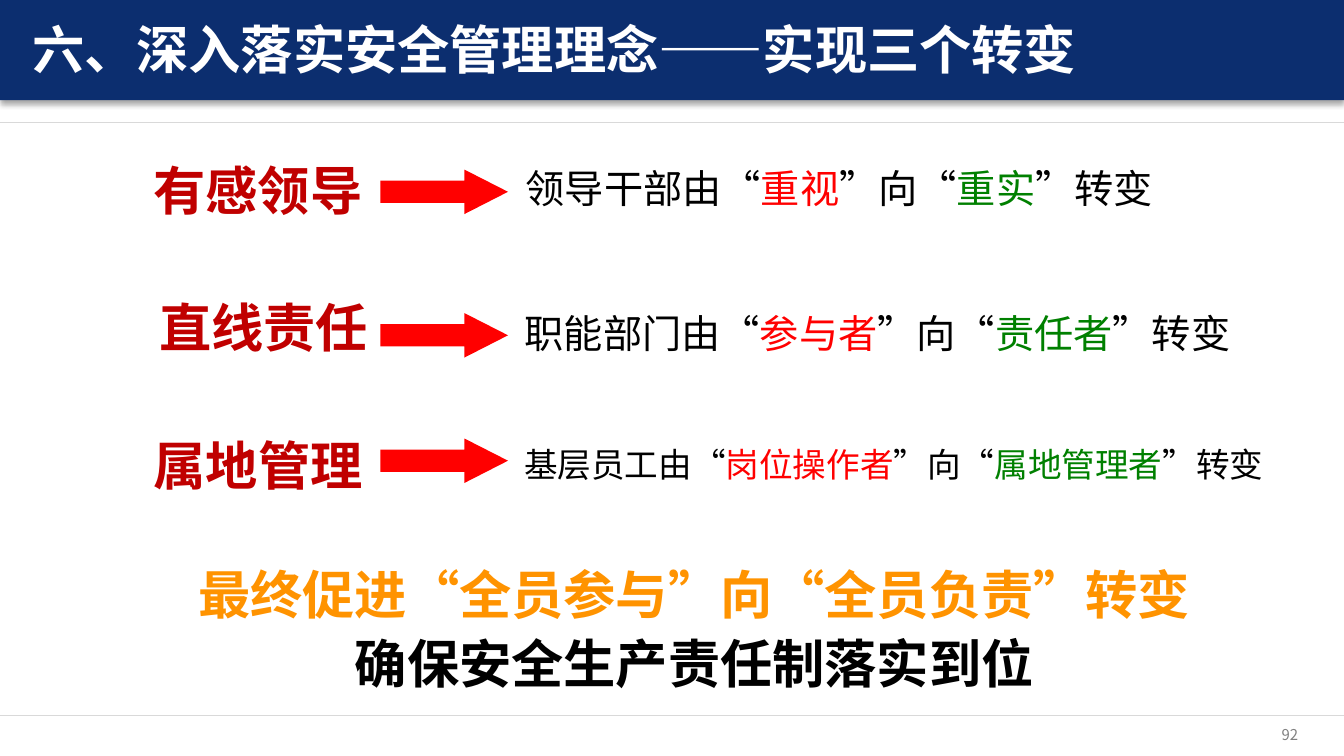
from lxml import etree
from pptx import Presentation
from pptx.dml.color import RGBColor
from pptx.enum.shapes import MSO_CONNECTOR, MSO_SHAPE
from pptx.enum.text import MSO_ANCHOR, PP_ALIGN
from pptx.oxml.ns import qn
from pptx.util import Inches, Pt

RECT, ARROW = MSO_SHAPE.RECTANGLE, MSO_SHAPE.RIGHT_ARROW
STRAIGHT = MSO_CONNECTOR.STRAIGHT
LEFT, CENTER, RIGHT = PP_ALIGN.LEFT, PP_ALIGN.CENTER, PP_ALIGN.RIGHT
TOP, MIDDLE = MSO_ANCHOR.TOP, MSO_ANCHOR.MIDDLE
FONT = "Noto Sans CJK SC"
C = {
    "white": "FFFFFF", "navy": "0C2E6F", "rule": "D9D9D9", "gray": "808080",
    "label": "C00000", "red": "FF0000", "green": "008000",
    "orange": "FF9300", "black": "000000",
}

prs = Presentation()
prs.slide_width = Inches(10)
prs.slide_height = prs.slide_width * 9 // 16
COL, ROW = prs.slide_width / 100, prs.slide_height / 100
s = prs.slides.add_slide(prs.slide_layouts[6])


def add_block(kind, x, y, w, h, color):
    sp = s.shapes.add_shape(kind, int(x * COL), int(y * ROW), int(w * COL), int(h * ROW))
    sp.shadow.inherit = False
    sp.fill.solid()
    sp.fill.fore_color.rgb = RGBColor.from_string(C[color])
    sp.line.fill.background()
    return sp


def add_text(x, y, w, h, paragraphs, size, bold=False, align=CENTER,
             anchor=TOP, inset=(0.09, 0.04), spacing=1.0):
    sp = s.shapes.add_textbox(int(x * COL), int(y * ROW), int(w * COL), int(h * ROW))
    tf = sp.text_frame
    tf.word_wrap = True
    tf.vertical_anchor = anchor
    tf.margin_left = tf.margin_right = Inches(inset[0])
    tf.margin_top = tf.margin_bottom = Inches(inset[1])
    for i, runs in enumerate(paragraphs):
        p = tf.add_paragraph() if i else tf.paragraphs[0]
        p.alignment = align
        p.line_spacing = spacing
        for text, color in runs:
            r = p.add_run()
            r.text = text
            r.font.size = Pt(size)
            r.font.bold = bold
            r.font.name = FONT
            r.font.color.rgb = RGBColor.from_string(C[color])
            rPr = r.font._element
            rPr.set("lang", "zh-CN")
            ea = etree.Element(qn("a:ea"), typeface=FONT)
            rPr.find(qn("a:latin")).addnext(ea)


add_block(RECT, 0, 94.6, 100, 5.4, "white")
for y in (16.12, 94.6):
    rule = s.shapes.add_connector(STRAIGHT, 0, int(y * ROW), prs.slide_width, int(y * ROW))
    rule.line.color.rgb = RGBColor.from_string(C["rule"])
    rule.line.width = Pt(0.25)
    etree.SubElement(rule._element.spPr, qn("a:effectLst"))

banner = add_block(RECT, 0, -0.95, 100, 14.22, "navy")
effects = banner._element.spPr.find(qn("a:effectLst"))
shadow = etree.SubElement(effects, qn("a:outerShdw"), blurRad=str(Pt(3)),
                          dist=str(Pt(1.8)), dir="5400000", rotWithShape="0")
shade = etree.SubElement(shadow, qn("a:srgbClr"), val=C["black"])
etree.SubElement(shade, qn("a:alpha"), val="35000")

add_text(2.4, 2.31, 85.4, 8.36, [[("六、深入落实安全管理理念——实现三个转变", "white")]],
         28, bold=True, align=LEFT, inset=(0, 0))
add_text(92.5, 95.9, 4.1, 2.49, [[("92", "gray")]], 8,
         align=RIGHT, anchor=MIDDLE, inset=(0, 0))

changes = [
    (" 有感领导", 8.3, 20.9, 22.44, "领导干部", "重视", "重实", 37.5, 20.98, 49.9, 21),
    ("直线责任", 10, 19.2, 41.42, "职能部门", "参与者", "责任者", 35, 40.18, 60.6, 21),
    ("属地管理", 10, 18.4, 58.01, "基层员工", "岗位操作者", "属地管理者", 36.6, 57.96, 59.8, 18),
]
for i, (label, lx, lw, ay, who, old, new, x, y, w, size) in enumerate(changes):
    add_text(lx, 20.27 + i * 18.13, lw, 10.31, [[(label, "label")]], 28, bold=True)
    arrow = add_block(ARROW, 28.3, ay, 9.5, 5.87, "red")
    arrow.adjustments[0], arrow.adjustments[1] = 0.5, 0.98
    runs = [(who + "由“", "black"), (old, "red"), ("”向“", "black"),
            (new, "green"), ("”转变", "black")]
    add_text(x, y, w, size * 0.37, [runs], size)

add_text(12.6, 72.89, 78.1, 19.73,
         [[("最终促进“全员参与”向“全员负责”转变", "orange")],
          [("确保安全生产责任制落实到位", "black")]], 28, bold=True, spacing=1.1)

prs.save("out.pptx")
